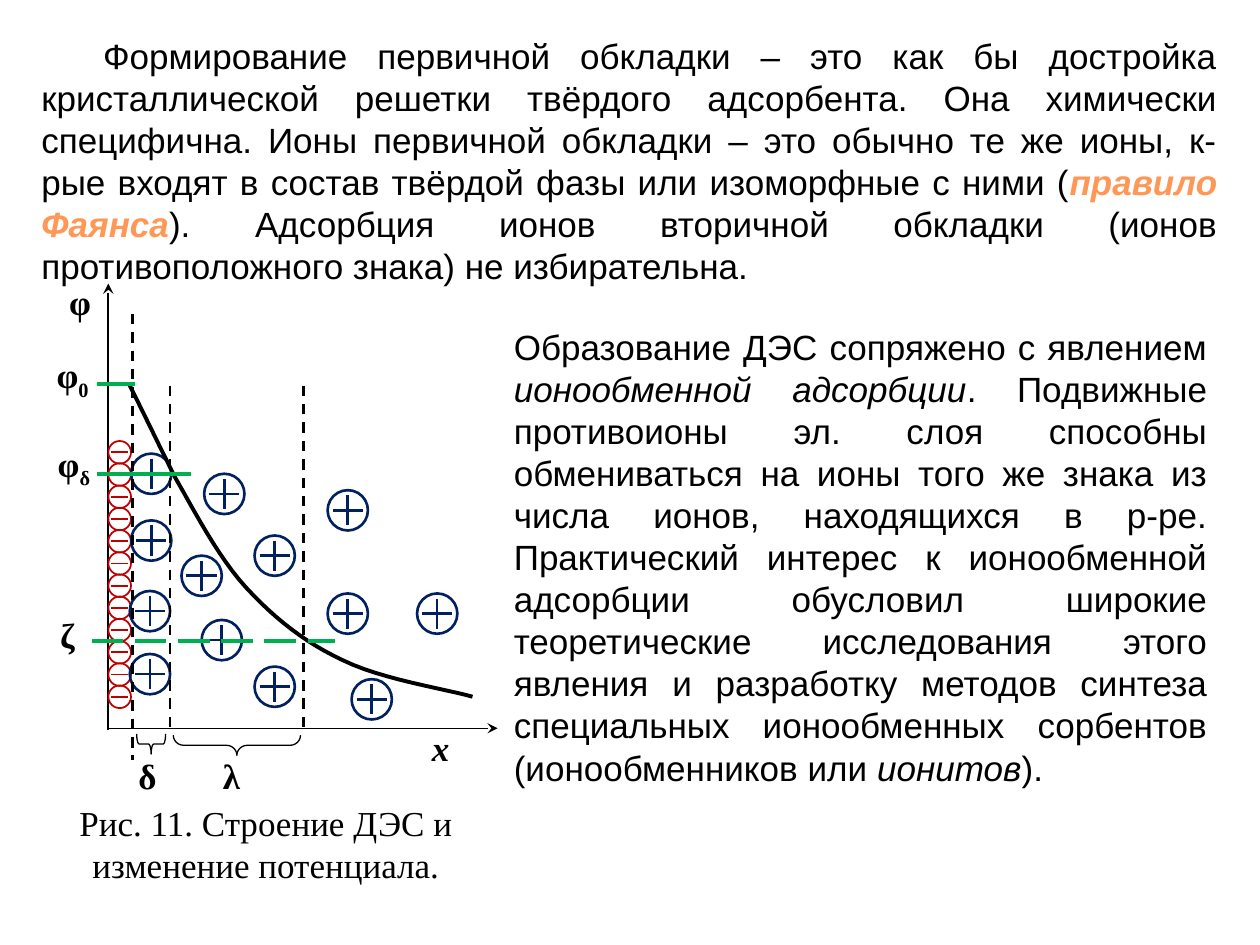
import pptx
import pptx.dml.color
import pptx.enum.dml
import pptx.enum.shapes
import pptx.enum.text
import pptx.oxml
import pptx.util

Inches = pptx.util.Inches
Pt = pptx.util.Pt
SHAPE = pptx.enum.shapes.MSO_SHAPE
DASH = pptx.enum.dml.MSO_LINE
ALIGN = pptx.enum.text.PP_ALIGN
ANCHOR = pptx.enum.text.MSO_ANCHOR

COLORS = {"ink": "000000", "rule": "FF9856", "anion": "C00000",
          "cation": "002060", "level": "00B050"}
SERIF = "Times New Roman"

INTRO = [
    ("Формирование первичной обкладки – это как бы достройка кристаллической "
     "решетки твёрдого адсорбента. Она химически специфична. Ионы первичной "
     "обкладки – это обычно те же ионы, к-рые входят в состав твёрдой фазы или "
     "изоморфные с ними (", ""),
    ("правило Фаянса", "bic"),
    ("). Адсорбция ионов вторичной обкладки (ионов противоположного знака) "
     "не избирательна.", ""),
]
EXCHANGE = [
    ("Образование ДЭС сопряжено с явлением ", ""),
    ("ионообменной адсорбции", "i"),
    (". Подвижные противоионы эл. слоя способны обмениваться на ионы того же "
     "знака из числа ионов, находящихся в р-ре. Практический интерес к "
     "ионообменной адсорбции обусловил широкие теоретические исследования этого "
     "явления и разработку методов синтеза специальных ионообменных сорбентов "
     "(ионообменников или ", ""),
    ("ионитов", "i"),
    (").", ""),
]
CAPTION = [("Рис. 11. Строение ДЭС и изменение потенциала.", "")]
LABELS = [
    (0.45, 2.18, 0.56, 0.58, [("φ", "b")]),
    (0.35, 2.76, 0.59, 0.54, [("φ", "b"), ("0", "bs")]),
    (0.36, 3.46, 0.51, 0.54, [("φ", "b"), ("δ", "bs")]),
    (0.38, 4.82, 0.50, 0.43, [("ζ", "b")]),
    (3.33, 5.72, 0.63, 0.48, [("x", "bi")]),
    (1.00, 5.94, 0.43, 0.37, [("δ", "b")]),
    (1.67, 5.94, 0.46, 0.44, [("λ", "b")]),
]
# Centres of the counter-ions
CATIONS = [(1.20, 3.76), (1.20, 4.29), (1.19, 4.85), (1.19, 5.35),
           (1.78, 3.92), (2.18, 5.45), (2.18, 4.41), (1.76, 5.08),
           (3.47, 4.87), (2.76, 4.05), (1.60, 4.57), (2.76, 4.87),
           (2.95, 5.55)]
# Each stretch is a cubic: start, two handles, end
CURVE = [
    [(1.03, 3.06), (1.15, 3.30), (1.27, 3.55), (1.39, 3.79)],
    [(1.39, 3.79), (1.54, 4.05), (1.73, 4.42), (1.95, 4.66)],
    [(1.95, 4.66), (2.18, 4.91), (2.42, 5.10), (2.72, 5.24)],
    [(2.72, 5.24), (3.02, 5.39), (3.54, 5.47), (3.75, 5.53)],
]


def paint(name):
    return pptx.dml.color.RGBColor.from_string(COLORS[name])


def stroke(line, color, width):
    line.color.rgb = paint(color)
    line.width = Pt(width)


def add_line(shapes, start, end, color, width, dash=None, arrow=False):
    line = shapes.add_connector(pptx.enum.shapes.MSO_CONNECTOR.STRAIGHT,
                                *map(Inches, start + end))
    stroke(line.line, color, width)
    if dash:
        line.line.dash_style = dash
    props = line._element.spPr
    if arrow:
        tip = pptx.oxml.parse_xml(
            '<a:tailEnd xmlns:a="http://schemas.openxmlformats.org/drawingml/'
            '2006/main" type="stealth"/>')
        line.line._get_or_add_ln().append(tip)
    props.append(pptx.oxml.parse_xml(
        '<a:effectLst xmlns:a="http://schemas.openxmlformats.org/drawingml/'
        '2006/main"/>'))


def add_outline(shapes, kind, box, color, width):
    shape = shapes.add_shape(kind, *map(Inches, box))
    shape.shadow.inherit = False
    shape.fill.background()
    stroke(shape.line, color, width)
    return shape


def add_ion(shapes, x, y, size, arm, color, width, plus):
    box = (x - size / 2, y - size / 2, size, size)
    add_outline(shapes, SHAPE.OVAL, box, color, width)
    add_line(shapes, (x - arm, y), (x + arm, y), color, width)
    if plus:
        add_line(shapes, (x, y - arm), (x, y + arm), color, width)


def add_brace(shapes, box, bend):
    brace = add_outline(shapes, SHAPE.LEFT_BRACE, box, "ink", 0.75)
    brace.adjustments[0] = bend
    brace.rotation = 270


def add_text(shapes, box, runs, font, align=ALIGN.LEFT, after=0, indent=0,
             anchor=ANCHOR.TOP):
    """Run marks: b bold, i italic, c accent colour, s subscript."""
    frame = shapes.add_textbox(*map(Inches, box)).text_frame
    frame.word_wrap = True
    frame.vertical_anchor = anchor
    para = frame.paragraphs[0]
    para.alignment = align
    para.space_after = Pt(after)
    para.font.name = font
    para.font.size = Pt(20)
    para.font.color.rgb = paint("ink")
    if indent:
        para._p.get_or_add_pPr().set("indent", str(Inches(indent)))
    for text, marks in runs:
        run = para.add_run()
        run.text = text
        run.font.name = font
        run.font.size = Pt(20)
        run.font.bold = "b" in marks
        run.font.italic = "i" in marks
        run.font.color.rgb = paint("rule" if "c" in marks else "ink")
        if "s" in marks:
            run._r.get_or_add_rPr().set("baseline", "-25000")


def bend_at(knots, t):
    """Point of a cubic at t, in EMU."""
    u = 1 - t
    parts = (u ** 3, 3 * u * u * t, 3 * u * t * t, t ** 3)
    return tuple(Inches(sum(w * k[axis] for w, k in zip(parts, knots)))
                 for axis in (0, 1))


def add_curve(shapes, steps=12):
    points = [bend_at(knots, n / steps)
              for knots in CURVE for n in range(1, steps + 1)]
    pen = shapes.build_freeform(*map(Inches, CURVE[0][0]))
    pen.add_line_segments(points, close=False)
    curve = pen.convert_to_shape()
    curve.shadow.inherit = False
    curve.fill.background()
    stroke(curve.line, "ink", 2.25)


def add_diagram(shapes):
    add_line(shapes, (0.86, 5.79), (0.86, 2.25), "ink", 1, arrow=True)
    first, last, count = 3.59, 5.53, 12
    for n in range(count):
        y = first + n * (last - first) / (count - 1)
        add_ion(shapes, 0.95, y, 0.18, 0.07, "anion", 1, plus=False)
    for x, y in CATIONS:
        add_ion(shapes, x, y, 0.32, 0.12, "cation", 1.5, plus=True)
    add_line(shapes, (0.86, 5.78), (3.95, 5.78), "ink", 0.75, arrow=True)
    for x, top, end in ((1.05, 2.49, 6.03), (1.35, 3.06, 5.78),
                        (2.41, 3.06, 5.78)):
        add_line(shapes, (x, top), (x, end), "ink", 1.5, DASH.DASH)
    add_curve(shapes)
    for left, right, y, dash in ((0.77, 1.07, 3.05, None),
                                 (0.77, 1.52, 3.76, None),
                                 (0.73, 2.66, 5.09, DASH.LONG_DASH)):
        add_line(shapes, (left, y), (right, y), "level", 2.25, dash)
    add_brace(shapes, (1.12, 5.79, 0.16, 0.23), 0.12)
    add_brace(shapes, (1.80, 5.41, 0.16, 1.01), 0.52)
    for *box, runs in LABELS:
        add_text(shapes, box, runs, SERIF, after=10)
    add_text(shapes, (0.32, 6.31, 3.58, 0.73), CAPTION, SERIF,
             ALIGN.CENTER, after=10)


def main():
    deck = pptx.Presentation()
    deck.slide_width, deck.slide_height = Inches(10), Inches(7.5)
    shapes = deck.slides.add_slide(deck.slide_layouts[6]).shapes
    add_text(shapes, (0.23, 0.21, 9.53, 2.12), INTRO, "Arial",
             ALIGN.JUSTIFY, indent=0.49, anchor=ANCHOR.MIDDLE)
    add_text(shapes, (3.98, 2.52, 5.7, 3.8), EXCHANGE, "Arial",
             ALIGN.JUSTIFY, anchor=ANCHOR.MIDDLE)
    add_diagram(shapes)
    deck.save("out.pptx")


if __name__ == "__main__":
    main()
